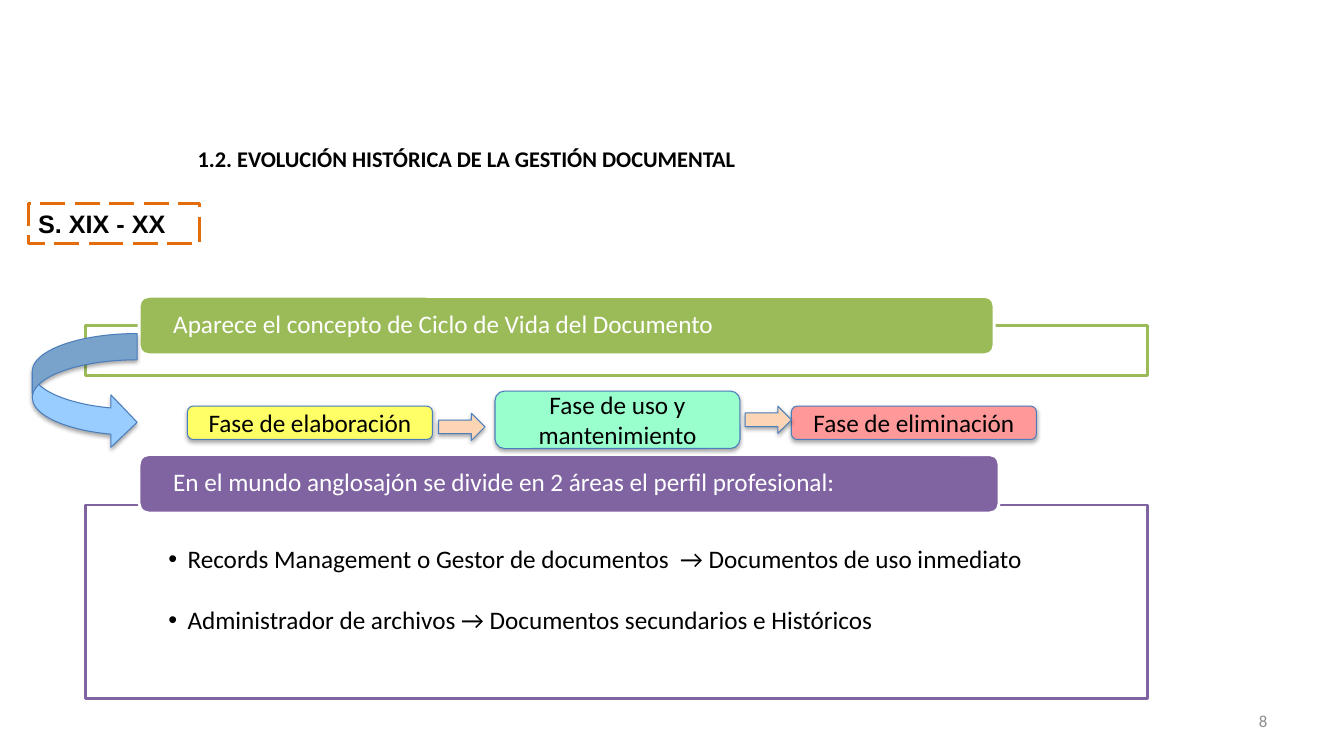
from lxml import etree
from pptx import Presentation
from pptx.dml.color import RGBColor
from pptx.enum.dml import MSO_LINE
from pptx.enum.shapes import MSO_SHAPE
from pptx.enum.text import MSO_ANCHOR, MSO_AUTO_SIZE, PP_ALIGN
from pptx.oxml.ns import qn
from pptx.util import Inches, Pt

RECT = MSO_SHAPE.RECTANGLE
ROUNDED = MSO_SHAPE.ROUNDED_RECTANGLE
RIGHT_ARROW = MSO_SHAPE.RIGHT_ARROW
CURVED_ARROW = MSO_SHAPE.CURVED_UP_ARROW
LONG_DASH = MSO_LINE.LONG_DASH
TOP, MIDDLE = MSO_ANCHOR.TOP, MSO_ANCHOR.MIDDLE
LEFT, CENTER, RIGHT = PP_ALIGN.LEFT, PP_ALIGN.CENTER, PP_ALIGN.RIGHT
NO_FIT = MSO_AUTO_SIZE.NONE

BLACK = RGBColor(0x00, 0x00, 0x00)
WHITE = RGBColor(0xFF, 0xFF, 0xFF)
GRAY = RGBColor(0x8C, 0x8C, 0x8C)
GREEN = RGBColor(0x9B, 0xBB, 0x59)
PURPLE = RGBColor(0x80, 0x64, 0xA2)
ORANGE = RGBColor(0xE4, 0x6C, 0x0A)
BLUE = RGBColor(0x4B, 0x7E, 0xBC)
SKY = RGBColor(0x99, 0xCC, 0xFF)
PEACH = RGBColor(0xFC, 0xD5, 0xB5)
YELLOW = RGBColor(0xFF, 0xFF, 0x66)
MINT = RGBColor(0x99, 0xFF, 0xCC)
PINK = RGBColor(0xFF, 0x99, 0x99)


class SlideBuilder:
    """Holds the style and the current slide, and adds each kind of element."""

    font = {"name": "Calibri", "size": Pt(18), "bold": False}
    margins = (0.1, 0.05, 0.1, 0.05)

    def __init__(self, page):
        self.page = page

    def place(self, box, at):
        for name, value in zip(("left", "top", "width", "height"), at):
            setattr(box, name, Inches(value))

    def paint(self, box, fill, line, width, dash=None):
        if fill is None:
            box.fill.background()
        else:
            box.fill.solid()
            box.fill.fore_color.rgb = fill
        box.line.color.rgb = line
        box.line.width = Pt(width)
        if dash is not None:
            box.line.dash_style = dash

    def set_text(self, box, lines, color=BLACK, align=LEFT, anchor=TOP, margins=margins,
                 spacing=1.0, gap=0, bullet=None, **font):
        frame = box.text_frame
        layout = {"word_wrap": True, "auto_size": NO_FIT, "vertical_anchor": anchor}
        sides = ("margin_left", "margin_top", "margin_right", "margin_bottom")
        layout.update(zip(sides, map(Inches, margins)))
        for name, value in layout.items():
            setattr(frame, name, value)
        frame.text = "\n".join(lines)
        for index, para in enumerate(frame.paragraphs):
            form = {"alignment": align, "line_spacing": spacing,
                    "space_before": Pt(gap if index else 0), "space_after": Pt(0)}
            for name, value in form.items():
                setattr(para, name, value)
            if bullet:
                self.add_bullet(para, bullet)
            for span in para.runs:
                for name, value in {**self.font, **font}.items():
                    setattr(span.font, name, value)
                span.font.color.rgb = color

    def add_bullet(self, para, mark):
        props = para._p.get_or_add_pPr()
        props.set("marL", str(Inches(0.19)))
        props.set("indent", str(-Inches(0.19)))
        etree.SubElement(props, qn("a:buFont"), typeface="Arial")
        etree.SubElement(props, qn("a:buChar"), char=mark)

    def add_shadow(self, box):
        effects = box._element.spPr.find(qn("a:effectLst"))
        shadow = etree.SubElement(effects, qn("a:outerShdw"), blurRad=str(Pt(3.1)),
                                  dist=str(Pt(1.8)), dir="5400000", rotWithShape="0")
        color = etree.SubElement(shadow, qn("a:srgbClr"), val=str(BLACK))
        etree.SubElement(color, qn("a:alpha"), val="35000")

    def title(self, at, text):
        box = self.page.shapes.title
        self.place(box, at)
        self.set_text(box, [text], size=Pt(16), bold=True)

    def body(self, at, lines, line):
        box = self.page.placeholders[1]
        self.place(box, at)
        self.paint(box, WHITE, line, 2)
        self.set_text(box, lines, margins=(0.82, 0.41, 0.82, 0.14),
                      spacing=0.9, gap=24.5, bullet="•")

    def text(self, at, text, **style):
        box = self.page.shapes.add_textbox(*map(Inches, at))
        self.set_text(box, [text], **style)

    def shape(self, kind, at, fill, line, width, dash=None):
        box = self.page.shapes.add_shape(kind, *map(Inches, at))
        box.shadow.inherit = False
        self.paint(box, fill, line, width, dash)
        return box

    def raised(self, kind, at, fill):
        box = self.shape(kind, at, fill, BLUE, 0.75)
        self.add_shadow(box)
        return box

    def banner(self, at, text, fill):
        box = self.shape(ROUNDED, at, fill, WHITE, 2)
        self.set_text(box, [text], color=WHITE, anchor=MIDDLE, spacing=0.9,
                      margins=(0.31, 0, 0.31, 0))

    def phase(self, at, text, fill):
        box = self.raised(ROUNDED, at, fill)
        self.set_text(box, [text], align=CENTER, anchor=MIDDLE)

    def label(self, at, text):
        box = self.shape(RECT, at, None, ORANGE, 2.25, LONG_DASH)
        self.set_text(box, [text], name="Arial", bold=True)


def main():
    deck = Presentation()
    deck.slide_width, deck.slide_height = Inches(13.33), Inches(7.5)
    slide = SlideBuilder(deck.slides.add_slide(deck.slide_layouts[1]))

    slide.title((1.86, 1.39, 5.98, 0.37),
                "1.2. EVOLUCIÓN HISTÓRICA DE LA GESTIÓN DOCUMENTAL")
    slide.body((0.85, 5.01, 10.53, 1.92),
               ["Records Management o Gestor de documentos  → Documentos de uso inmediato",
                "Administrador de archivos → Documentos secundarios e Históricos"], PURPLE)
    slide.text((9.56, 6.95, 3.11, 0.4), "8", color=GRAY, align=RIGHT,
               anchor=MIDDLE, size=Pt(12))

    slide.shape(RECT, (0.85, 3.23, 10.53, 0.5), WHITE, GREEN, 2)
    slide.banner((1.38, 2.94, 8.48, 0.58),
                 "Aparece el concepto de Ciclo de Vida del Documento", GREEN)
    slide.banner((1.38, 4.51, 8.53, 0.58),
                 "En el mundo anglosajón se divide en 2 áreas el perfil profesional:", PURPLE)

    phases = [(1.86, 4.03, 0.33, "Fase de elaboración", YELLOW),
              (4.91, 3.88, 0.57, "Fase de uso y mantenimiento", MINT),
              (7.85, 4.03, 0.33, "Fase de eliminación", PINK)]
    for left, top, height, text, fill in phases:
        slide.phase((left, top, 2.43, height), text, fill)
    for left, top in ((4.35, 4.1), (7.39, 4.03)):
        slide.raised(RIGHT_ARROW, (left, top, 0.46, 0.27), PEACH)
    slide.raised(CURVED_ARROW, (0.27, 3.36, 1.14, 1.04), SKY).rotation = 90
    slide.label((0.28, 2.02, 1.7, 0.4), "S. XIX - XX")

    deck.save("out.pptx")


if __name__ == "__main__":
    main()
